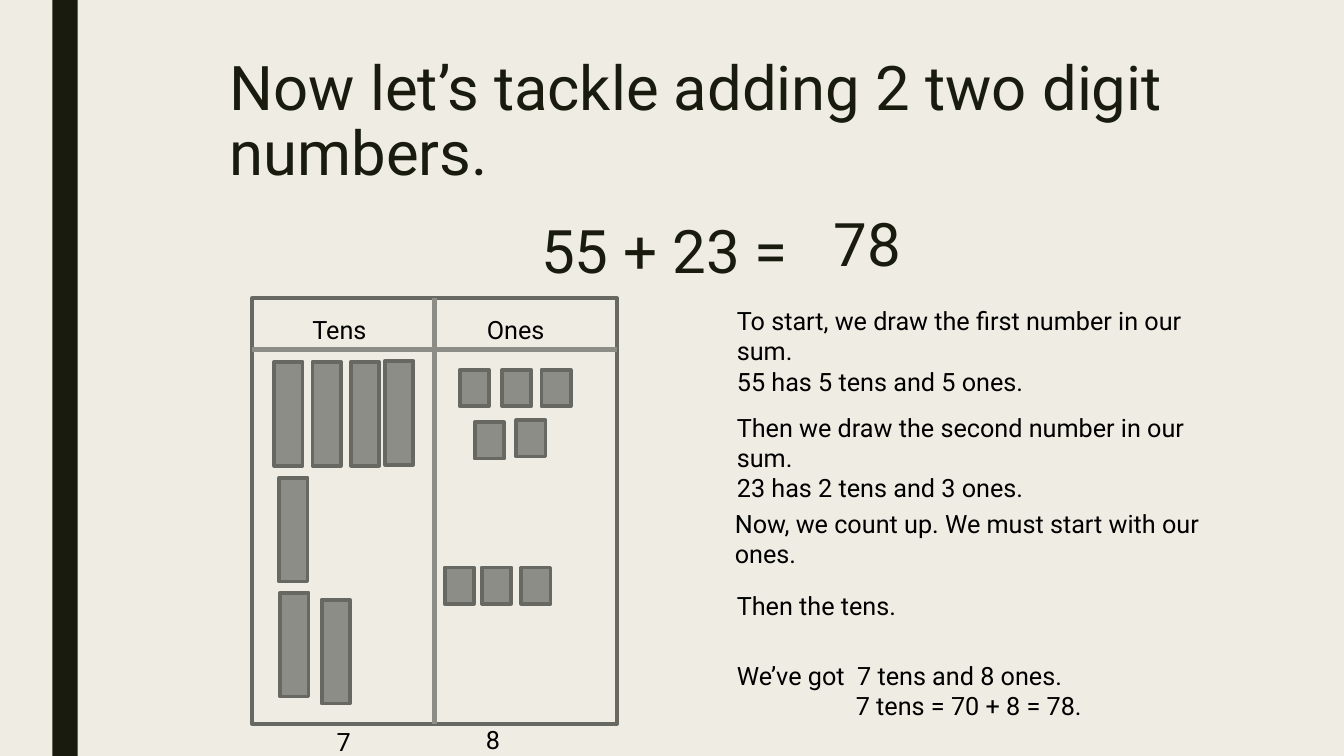
from dataclasses import dataclass

import pptx
import pptx.dml.color
import pptx.enum.shapes
import pptx.enum.text
import pptx.oxml.ns
import pptx.util
from lxml import etree

PX = 9144  # EMU in one px, 100 px to the inch


@dataclass(frozen=True)
class Theme:
    font: str = "Roboto"
    page: str = "EFEDE3"
    dark: str = "191B0E"
    body: str = "000000"
    block: str = "8C8D86"
    edge: str = "686863"
    title_size: float = 44
    sum_size: float = 42.9
    body_size: float = 18
    edge_width: float = 2.75
    rule_width: float = 3.75


THEME = Theme()


@dataclass(frozen=True)
class Label:
    left: int
    top: int
    width: int
    height: int
    lines: tuple[str, ...]
    size: float = THEME.body_size
    color: str = THEME.body
    spacing: float = 1.0
    last_indent: int = 0


@dataclass(frozen=True)
class BlockRow:
    top: int
    lefts: tuple[int, ...]
    width: int
    height: int


def px(length: int) -> pptx.util.Emu:
    return pptx.util.Emu(length * PX)


def rgb(color: str) -> pptx.dml.color.RGBColor:
    return pptx.dml.color.RGBColor.from_string(color)


def add_box(page, left: int, top: int, width: int, height: int,
            fill: str | None = None, edge: str | None = None) -> None:
    box = page.shapes.add_shape(pptx.enum.shapes.MSO_SHAPE.RECTANGLE,
                                px(left), px(top), px(width), px(height))
    box.shadow.inherit = False
    if fill:
        box.fill.solid()
        box.fill.fore_color.rgb = rgb(fill)
    else:
        box.fill.background()
    if edge:
        box.line.color.rgb = rgb(edge)
        box.line.width = pptx.util.Pt(THEME.edge_width)
    else:
        box.line.fill.background()


def add_rule(page, x1: int, y1: int, x2: int, y2: int) -> None:
    rule = page.shapes.add_connector(pptx.enum.shapes.MSO_CONNECTOR.STRAIGHT,
                                     px(x1), px(y1), px(x2), px(y2))
    rule.line.color.rgb = rgb(THEME.block)
    rule.line.width = pptx.util.Pt(THEME.rule_width)
    etree.SubElement(rule._element.spPr, pptx.oxml.ns.qn("a:effectLst"))


def add_label(page, label: Label) -> None:
    box = page.shapes.add_textbox(px(label.left), px(label.top),
                                  px(label.width), px(label.height))
    frame = box.text_frame
    frame.word_wrap = True
    frame.vertical_anchor = pptx.enum.text.MSO_ANCHOR.TOP
    font_format = {"name": THEME.font, "size": pptx.util.Pt(label.size)}
    for number, line in enumerate(label.lines):
        para = frame.add_paragraph() if number else frame.paragraphs[0]
        para.line_spacing = label.spacing
        span = para.add_run()
        span.text = line
        for name, value in font_format.items():
            setattr(span.font, name, value)
        span.font.color.rgb = rgb(label.color)
    if label.last_indent:
        para._p.get_or_add_pPr().set("marL", str(px(label.last_indent)))


# Place value chart
CHART_LEFT, CHART_TOP, CHART_WIDTH, CHART_HEIGHT = 250, 296, 362, 422
CHART_RIGHT, CHART_BOTTOM = CHART_LEFT + CHART_WIDTH, CHART_TOP + CHART_HEIGHT
COLUMN_SPLIT, HEADER_BOTTOM = CHART_LEFT + CHART_WIDTH // 2, 347

TEN = {"width": 28, "height": 103}
ONE = {"width": 29, "height": 36}
BLOCK_ROWS = (
    BlockRow(359, (272, 310, 348), **TEN),
    BlockRow(358, (382,), **TEN),
    BlockRow(474, (277,), **TEN),
    BlockRow(588, (278,), **TEN),
    BlockRow(595, (319,), **TEN),
    BlockRow(367, (456, 498, 537), **ONE),
    BlockRow(419, (471,), **ONE),
    BlockRow(417, (512,), **ONE),
    BlockRow(563, (441, 478, 517), **ONE),
)

# Title, sum, chart labels and worked steps
SUM = {"width": 1050, "height": 67, "size": THEME.sum_size,
       "color": THEME.dark, "spacing": 0.79}
CELL = {"width": 156, "height": 40}
STEP = {"width": 508, "height": 71}
LABELS = (
    Label(218, 52, 1050, 162, ("Now let’s tackle adding 2 two digit numbers.",),
          THEME.title_size, THEME.dark, 0.89),
    Label(527, 221, lines=("55 + 23 =",), **SUM),
    Label(817, 214, lines=("78",), **SUM),
    Label(300, 307, lines=("Tens",), **CELL),
    Label(473, 307, lines=("Ones",), **CELL),
    Label(324, 716, lines=("7",), **CELL),
    Label(472, 714, lines=("8",), **CELL),
    Label(721, 298, lines=("To start, we draw the first number in our sum.",
                           "55 has 5 tens and 5 ones."), **STEP),
    Label(721, 404, lines=("Then we draw the second number in our sum.",
                           "23 has 2 tens and 3 ones."), **STEP),
    Label(719, 499, lines=("Now, we count up. We must start with our ones.",), **STEP),
    Label(721, 581, 508, 40, ("Then the tens.",)),
    Label(721, 650, lines=("We’ve got  7 tens and 8 ones.",
                           "7 tens = 70 + 8 = 78."), last_indent=118, **STEP),
)


def main() -> None:
    deck = pptx.Presentation()
    deck.slide_width, deck.slide_height = px(1333), px(750)
    page = deck.slides.add_slide(deck.slide_layouts[6])
    page.background.fill.solid()
    page.background.fill.fore_color.rgb = rgb(THEME.page)

    # Side band
    add_box(page, 52, 0, 25, 750, fill=THEME.dark)

    # Chart frame and dividers
    add_box(page, CHART_LEFT, CHART_TOP, CHART_WIDTH, CHART_HEIGHT, edge=THEME.edge)
    add_rule(page, COLUMN_SPLIT, CHART_TOP, COLUMN_SPLIT, CHART_BOTTOM)
    add_rule(page, CHART_LEFT, HEADER_BOTTOM, CHART_RIGHT, HEADER_BOTTOM)

    # Tens and ones blocks
    for row in BLOCK_ROWS:
        for left in row.lefts:
            add_box(page, left, row.top, row.width, row.height,
                    fill=THEME.block, edge=THEME.edge)

    # Text
    for label in LABELS:
        add_label(page, label)

    deck.save("out.pptx")


if __name__ == "__main__":
    main()
